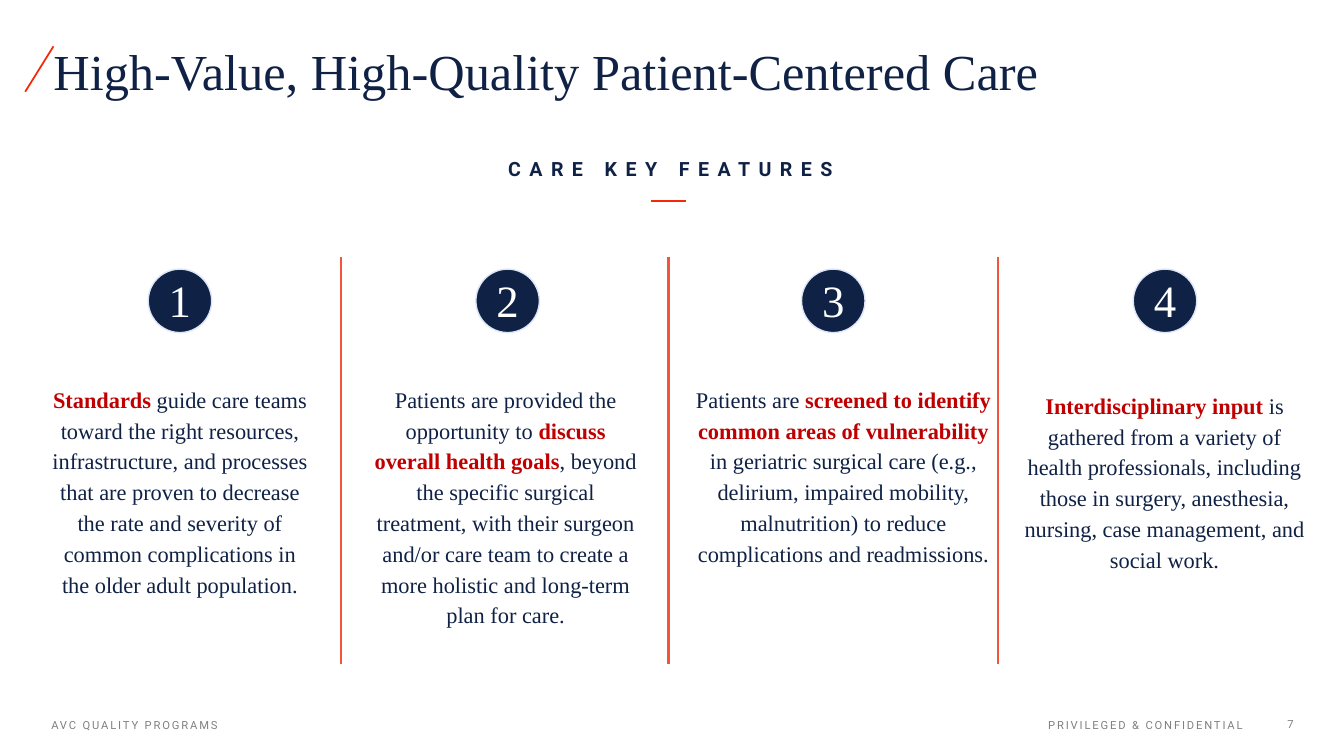
from dataclasses import dataclass

from lxml import etree
from pptx import Presentation
from pptx.dml.color import RGBColor
from pptx.enum.shapes import MSO_CONNECTOR, MSO_SHAPE
from pptx.enum.text import MSO_ANCHOR, PP_ALIGN
from pptx.oxml.ns import qn
from pptx.shapes.base import BaseShape
from pptx.slide import Slide
from pptx.util import Inches, Pt

LEFT, CENTER, RIGHT = PP_ALIGN.LEFT, PP_ALIGN.CENTER, PP_ALIGN.RIGHT
TOP, MIDDLE = MSO_ANCHOR.TOP, MSO_ANCHOR.MIDDLE
STRAIGHT, OVAL = MSO_CONNECTOR.STRAIGHT, MSO_SHAPE.OVAL

COLORS = {
    "navy": "0F2145",
    "orange": "F5290A",
    "divider": "F4543C",
    "emphasis": "C00000",
    "ring": "DCE5F7",
    "grey": "808080",
    "white": "FFFFFF",
}
SERIF, SANS = "Times New Roman", "Roboto"
BADGE_TOP, BADGE_SIZE = 2.67, 0.63
DIVIDER_TOP, DIVIDER_BOTTOM = 2.55, 6.59
FOOTER_TOP, FOOTER_HEIGHT = 7.12, 0.2


@dataclass(frozen=True)
class Style:
    font: str
    size: float
    color: str
    bold: bool = False
    tracking: float = 0


@dataclass(frozen=True)
class Span:
    text: str
    style: Style


@dataclass(frozen=True)
class Area:
    left: float
    top: float
    width: float
    height: float


@dataclass(frozen=True)
class Feature:
    badge_left: float
    area: Area
    spans: tuple[Span, ...]


TITLE = Style(SERIF, 36, "navy")
HEADING = Style(SANS, 14, "navy", bold=True, tracking=6)
NUMBER = Style(SERIF, 32, "white", tracking=-1)
BODY = Style(SERIF, 16, "navy")
STRONG = Style(SERIF, 16, "emphasis", bold=True)
FOOTER = Style(SANS, 8, "grey", tracking=1.3)
PAGE_NUMBER = Style(SANS, 8, "grey")

FEATURES = (
    Feature(1.47, Area(0.42, 3.69, 2.73, 2.38), (
        Span("Standards", STRONG),
        Span(" guide care teams toward the right resources, infrastructure, and "
             "processes that are proven to decrease the rate and severity of "
             "common complications in the older adult population.", BODY),
    )),
    Feature(4.72, Area(3.6, 3.69, 2.83, 2.38), (
        Span("Patients are provided the opportunity to ", BODY),
        Span("discuss overall health goals", STRONG),
        Span(", beyond the specific surgical treatment, with their surgeon and/or "
             "care team to create a more holistic and long-term plan for care.", BODY),
    )),
    Feature(7.95, Area(6.74, 3.69, 3.25, 2.38), (
        Span("Patients are ", BODY),
        Span("screened to identify common areas of vulnerability ", STRONG),
        Span("in geriatric surgical care (e.g., delirium, impaired mobility, "
             "malnutrition) to reduce complications and readmissions.", BODY),
    )),
    Feature(11.24, Area(10.01, 3.75, 3.08, 2.35), (
        Span("Interdisciplinary input ", STRONG),
        Span("is gathered from a variety of health professionals, including those in "
             "surgery, anesthesia, nursing, case management, and social work.", BODY),
    )),
)
DIVIDERS = (3.38, 6.63, 9.9)


def color(name: str) -> RGBColor:
    return RGBColor.from_string(COLORS[name])


def write(shape: BaseShape, spans: tuple[Span, ...], align: PP_ALIGN = LEFT,
          insets: tuple[float, ...] = (0, 0, 0, 0), anchor: MSO_ANCHOR = TOP,
          line_spacing: float | Pt | None = None, space_before: float = 0) -> None:
    """Fill a shape with one paragraph; insets run left, top, right, bottom."""
    frame = shape.text_frame
    frame.word_wrap = True
    frame.vertical_anchor = anchor
    frame.margin_left, frame.margin_top, frame.margin_right, frame.margin_bottom = map(
        Inches, insets)
    para = frame.paragraphs[0]
    para.alignment = align
    para.line_spacing = line_spacing
    para.space_before = Pt(space_before)
    for span in spans:
        style = span.style
        run = para.add_run()
        run.text = span.text
        run.font.name = style.font
        run.font.size = Pt(style.size)
        run.font.bold = style.bold
        run.font.color.rgb = color(style.color)
        if style.tracking:
            run._r.get_or_add_rPr().set("spc", str(round(style.tracking * 100)))


def add_text(page: Slide, area: Area) -> BaseShape:
    return page.shapes.add_textbox(Inches(area.left), Inches(area.top),
                                   Inches(area.width), Inches(area.height))


def add_line(page: Slide, start: tuple[float, float], end: tuple[float, float],
             line_color: str, width: float) -> None:
    line = page.shapes.add_connector(STRAIGHT, *map(Inches, start + end))
    line.line.color.rgb = color(line_color)
    line.line.width = Pt(width)
    etree.SubElement(line._element.spPr, qn("a:effectLst"))


def add_badge(page: Slide, left: float, number: int) -> None:
    badge = page.shapes.add_shape(OVAL, Inches(left), Inches(BADGE_TOP),
                                  Inches(BADGE_SIZE), Inches(BADGE_SIZE))
    badge.shadow.inherit = False
    badge.fill.solid()
    badge.fill.fore_color.rgb = color("navy")
    badge.line.color.rgb = color("ring")
    badge.line.width = Pt(1)
    write(badge, (Span(str(number), NUMBER),), CENTER, (0.1, 0.1, 0.1, 0.05), MIDDLE, 0.9)


def add_footer(page: Slide, left: float, width: float, text: str, align: PP_ALIGN) -> None:
    box = add_text(page, Area(left, FOOTER_TOP, width, FOOTER_HEIGHT))
    write(box, (Span(text, FOOTER),), align, (0, 0.01, 0, 0), space_before=0.6)


def main() -> None:
    deck = Presentation()
    deck.slide_width, deck.slide_height = Inches(13.33), Inches(7.5)
    page = deck.slides.add_slide(deck.slide_layouts[6])

    add_line(page, (0.25, 0.91), (0.53, 0.46), "orange", 1.25)
    title = add_text(page, Area(0.53, 0.47, 12.3, 1))
    write(title, (Span("High-Value, High-Quality Patient-Centered Care", TITLE),),
          line_spacing=0.9)

    heading = add_text(page, Area(3.65, 1.51, 6, 0.34))
    write(heading, (Span("CARE KEY FEATURES", HEADING),), CENTER, (0.1, 0.05, 0.1, 0.05))
    add_line(page, (6.46, 1.99), (6.8, 1.99), "orange", 1.5)

    for x in DIVIDERS:
        add_line(page, (x, DIVIDER_TOP), (x, DIVIDER_BOTTOM), "divider", 1.5)
    for number, feature in enumerate(FEATURES, start=1):
        add_badge(page, feature.badge_left, number)
        write(add_text(page, feature.area), feature.spans, CENTER, (0.1, 0.1, 0.1, 0),
              line_spacing=Pt(22))

    add_footer(page, 0.51, 3, "AVC QUALITY PROGRAMS", LEFT)
    add_footer(page, 9.66, 2.67, "PRIVILEGED & CONFIDENTIAL", RIGHT)
    page_number = add_text(page, Area(12.16, FOOTER_TOP, 0.67, FOOTER_HEIGHT))
    write(page_number, (Span("7", PAGE_NUMBER),), RIGHT)

    deck.save("out.pptx")


if __name__ == "__main__":
    main()
